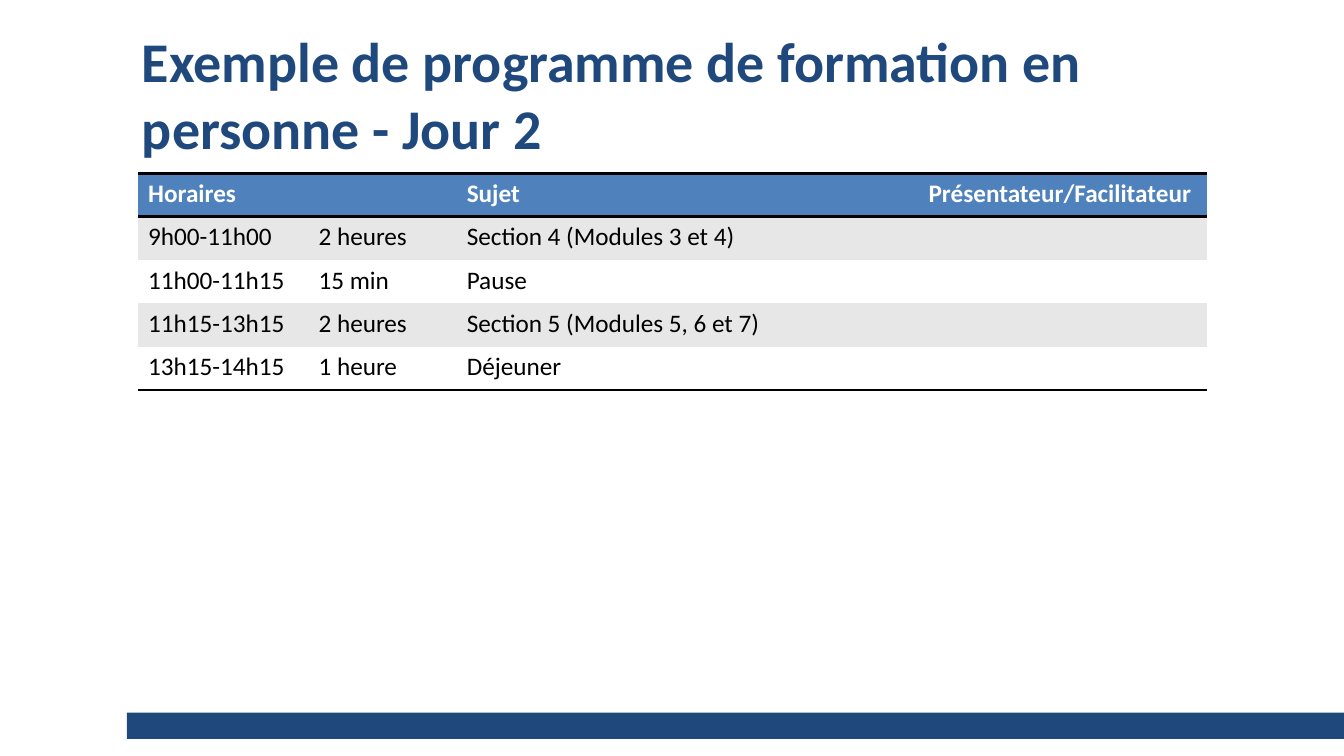
"""Build the day 2 training agenda slide."""
from lxml import etree
from pptx import Presentation
from pptx import util as u
from pptx.dml.color import RGBColor
from pptx.enum import shapes, text
from pptx.oxml.ns import qn

NAVY = RGBColor(0x1F, 0x49, 0x7D)
BLUE = RGBColor(0x4F, 0x81, 0xBD)
GREY = RGBColor(0xE7, 0xE7, 0xE7)
WHITE = RGBColor(0xFF, 0xFF, 0xFF)
BLACK = RGBColor(0x00, 0x00, 0x00)
FONT = "Calibri"
NO_STYLE = "{2D5ABB26-0587-4C30-8999-92F81FD0307C}"
RULE_WIDTH = u.Pt(2)
COLUMNS = [1.69, 1.47, 4.58, 2.86]
ROW_HEIGHT = 0.43
AGENDA = [
    ["Horaires", "", "Sujet", "Présentateur/Facilitateur"],
    ["9h00-11h00", "2 heures", "Section 4 (Modules 3 et 4)", ""],
    ["11h00-11h15", "15 min", "Pause", ""],
    ["11h15-13h15", "2 heures", "Section 5 (Modules 5, 6 et 7)", ""],
    ["13h15-14h15", "1 heure", "Déjeuner", ""],
]


def box(left, top, width, height):
    """Turn inches into a position and size."""
    return [u.Inches(v) for v in (left, top, width, height)]


def style(p, size, color, bold):
    """Set the font of a paragraph."""
    p.font.name = FONT
    p.font.size = u.Pt(size)
    p.font.bold = bold
    p.font.color.rgb = color


def add_footer_bar(s):
    """Draw the bar at the foot of the slide."""
    sp = s.shapes.add_shape(shapes.MSO_SHAPE.RECTANGLE, *box(1.26, 7.07, 12.07, 0.26))
    sp.shadow.inherit = False
    sp.fill.solid()
    sp.fill.fore_color.rgb = NAVY
    sp.line.fill.background()


def add_title(s, title):
    """Write the slide title."""
    tf = s.shapes.add_textbox(*box(1.31, 0.3, 10.59, 1.25)).text_frame
    tf.word_wrap = True
    tf.vertical_anchor = text.MSO_ANCHOR.MIDDLE
    p = tf.paragraphs[0]
    p.text = title
    style(p, 40, NAVY, True)


def add_rules(cell, sides):
    """Draw black rules on the given sides of a cell, top before bottom."""
    tc_pr = cell._tc.get_or_add_tcPr()
    for i, side in enumerate(sides):
        ln = etree.Element(qn(f"a:ln{side}"), w=str(RULE_WIDTH))
        fill = etree.SubElement(ln, qn("a:solidFill"))
        etree.SubElement(fill, qn("a:srgbClr"), val=str(BLACK))
        tc_pr.insert(i, ln)


def add_agenda(s, rows):
    """Lay out the agenda as a banded table with rules."""
    frame = s.shapes.add_table(len(rows), len(COLUMNS),
                               *box(1.37, 1.72, sum(COLUMNS), ROW_HEIGHT * len(rows)))
    table = frame.table
    table._tbl.tblPr.find(qn("a:tableStyleId")).text = NO_STYLE
    for column, width in zip(table.columns, COLUMNS):
        column.width = u.Inches(width)
    for i, row in enumerate(rows):
        header = i == 0
        fill = BLUE if header else GREY if i % 2 else WHITE
        sides = "TB" if header else "B" if i == len(rows) - 1 else ""
        for j, words in enumerate(row):
            cell = table.cell(i, j)
            cell.fill.solid()
            cell.fill.fore_color.rgb = fill
            add_rules(cell, sides)
            p = cell.text_frame.paragraphs[0]
            p.text = words
            style(p, 18, WHITE if header else BLACK, header)


def main():
    """Build and save the slide."""
    prs = Presentation()
    prs.slide_width, prs.slide_height = u.Inches(13.33), u.Inches(7.5)
    s = prs.slides.add_slide(prs.slide_layouts[6])
    add_footer_bar(s)
    add_title(s, "Exemple de programme de formation en personne - Jour 2")
    add_agenda(s, AGENDA)
    prs.save("out.pptx")


if __name__ == "__main__":
    main()
